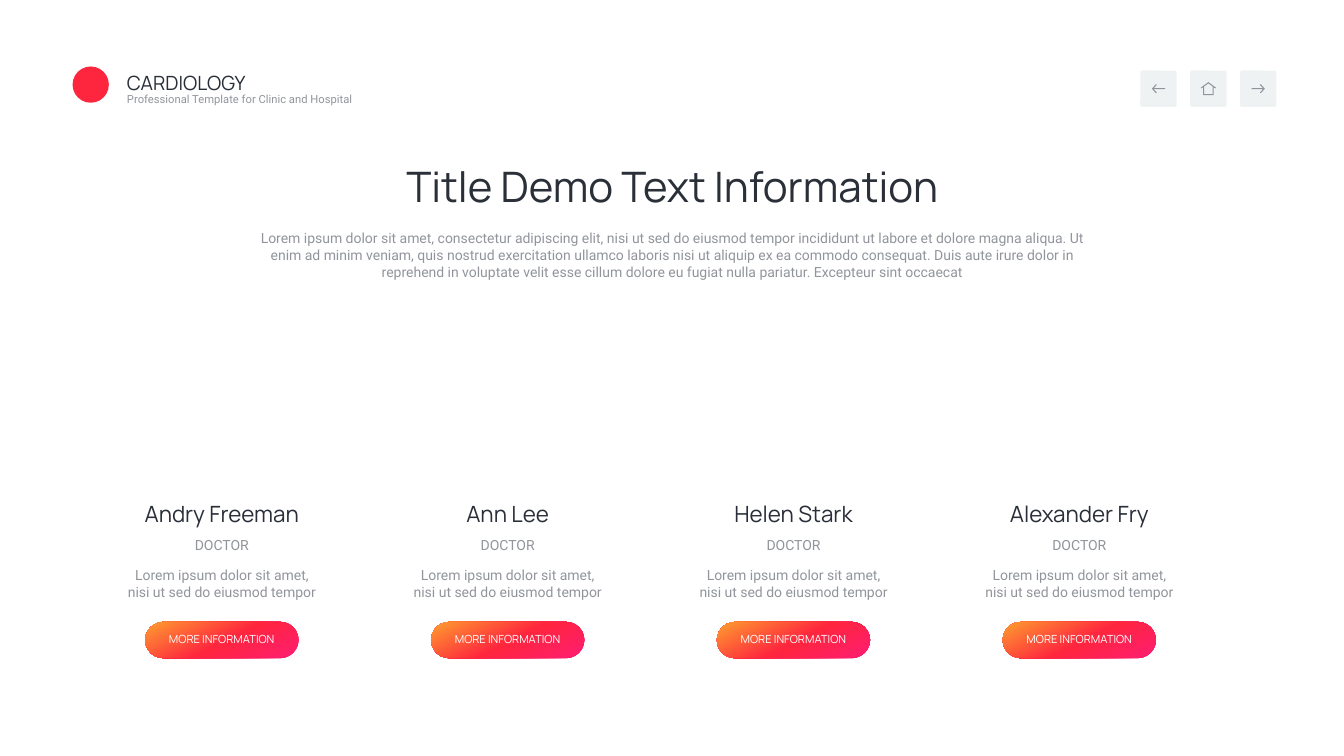
from lxml import etree
from pptx import Presentation, util as u
from pptx.dml.color import RGBColor
from pptx.enum import shapes, text
from pptx.oxml.ns import qn

SLIDE_WIDTH, SLIDE_HEIGHT = 13.33, 7.5
DARK, GREY, TILE, WHITE = "292E38", "91959B", "EFF2F3", "FFFFFF"
HEADING_FONT, BODY_FONT = "Manrope", "Roboto"
WARM_STOPS = [(1, "FE1D72"), (47, "FE253E"), (100, "FE9F2F")]
DOCTORS = ["Andry Freeman", "Ann Lee", "Helen Stark", "Alexander Fry"]
FIRST_CENTRE, COLUMN_PITCH = 2.2, 2.835
TILE_SIZE, TILE_TOP, TILE_PITCH = 0.36, 0.7, 0.495
FIRST_TILE = 11.31
DESCRIPTION = (
    "Lorem ipsum dolor sit amet, consectetur adipiscing elit, nisi ut sed do "
    "eiusmod tempor incididunt ut labore et dolore magna aliqua. Ut enim ad "
    "minim veniam, quis nostrud exercitation ullamco laboris nisi ut aliquip ex "
    "ea commodo consequat. Duis aute irure dolor in reprehend in voluptate velit "
    "esse cillum dolore eu fugiat nulla pariatur. Excepteur sint occaecat"
)

# Icon outlines, in thousandths of an inch
RIGHT_ARROW = [[(130, 45), (90, 90), (82, 82), (112, 50), (0, 50),
                (0, 40), (112, 40), (82, 8), (90, 0)]]
LEFT_ARROW = [[(130 - x, y) for x, y in RIGHT_ARROW[0]]]
HOUSE = [
    [(75, 0), (150, 55), (144, 63), (127, 50), (127, 130),
     (23, 130), (23, 50), (6, 63), (0, 55)],
    [(75, 13), (33, 43), (33, 120), (117, 120), (117, 43)],
]


def color(value):
    return RGBColor.from_string(value)


def fill_solid(shape, value):
    shape.shadow.inherit = False
    shape.fill.solid()
    shape.fill.fore_color.rgb = color(value)
    shape.line.fill.background()


def fill_gradient(shape, stops, clockwise_angle):
    shape.shadow.inherit = False
    shape.line.fill.background()
    shape.fill.gradient()
    shape.fill.gradient_angle = 360 - clockwise_angle
    stop_list = shape._element.spPr.find(".//" + qn("a:gsLst"))
    for stop in list(stop_list):
        stop_list.remove(stop)
    for percent, value in stops:
        stop = etree.SubElement(stop_list, qn("a:gs"), pos=str(percent * 1000))
        etree.SubElement(stop, qn("a:srgbClr"), val=value)


def add_preset(slide, preset, left, top, width, height):
    return slide.shapes.add_shape(
        preset, *map(u.Inches, (left, top, width, height)))


def add_label(slide, wording, left, top, width, height, size, font, value,
              align=text.PP_ALIGN.CENTER, middle=False, inset=0.03):
    box = slide.shapes.add_textbox(*map(u.Inches, (left, top, width, height)))
    frame = box.text_frame
    frame.text = wording
    frame.word_wrap = True
    frame.auto_size = text.MSO_AUTO_SIZE.SHAPE_TO_FIT_TEXT
    frame.vertical_anchor = (
        text.MSO_ANCHOR.MIDDLE if middle else text.MSO_ANCHOR.TOP)
    frame.margin_left = frame.margin_right = u.Inches(inset)
    frame.margin_top = frame.margin_bottom = u.Inches(inset)
    paragraph = frame.paragraphs[0]
    paragraph.alignment = align
    for run in paragraph.runs:
        run.font.size = u.Pt(size)
        run.font.name = font
        run.font.color.rgb = color(value)


def add_icon(slide, contours, centre_x, centre_y):
    width = max(x for x, _ in contours[0]) / 1000
    height = max(y for _, y in contours[0]) / 1000
    builder = slide.shapes.build_freeform(*contours[0][0], scale=u.Inches(1) / 1000)
    builder.add_line_segments(contours[0][1:], close=True)
    for contour in contours[1:]:
        builder.move_to(*contour[0])
        builder.add_line_segments(contour[1:], close=True)
    icon = builder.convert_to_shape(
        u.Inches(centre_x - width / 2), u.Inches(centre_y - height / 2))
    fill_solid(icon, "90959C")


def add_navigation(slide):
    for index, icon in enumerate([LEFT_ARROW, HOUSE, RIGHT_ARROW]):
        left = FIRST_TILE + index * TILE_PITCH
        tile = add_preset(slide, shapes.MSO_SHAPE.ROUNDED_RECTANGLE,
                          left, TILE_TOP, TILE_SIZE, TILE_SIZE)
        tile.adjustments[0] = 0.05
        fill_solid(tile, TILE)
        add_icon(slide, icon, left + TILE_SIZE / 2, TILE_TOP + TILE_SIZE / 2)


def add_header(slide):
    marker = add_preset(slide, shapes.MSO_SHAPE.OVAL, 0.72, 0.66, 0.36, 0.36)
    fill_solid(marker, "FE253E")
    left = text.PP_ALIGN.LEFT
    add_label(slide, "CARDIOLOGY", 1.2, 0.64, 1.56, 0.35, 14,
              HEADING_FONT, DARK, left, inset=0.06)
    add_label(slide, "Professional Template for Clinic and Hospital",
              1.2, 0.86, 3.47, 0.25, 8, BODY_FONT, GREY, left, True, 0.06)


def add_doctor(slide, name, centre):
    def centred(wording, top, width, height, size, font, value, middle=False):
        add_label(slide, wording, centre - width / 2, top, width, height,
                  size, font, value, middle=middle)

    centred(name, 4.93, 2.19, 0.33, 16, HEADING_FONT, DARK)
    centred("DOCTOR", 5.3, 0.8, 0.22, 10, BODY_FONT, GREY, middle=True)
    centred("Lorem ipsum dolor sit amet, nisi ut sed do eiusmod tempor",
            5.59, 1.94, 0.39, 10, BODY_FONT, GREY)
    button = add_preset(slide, shapes.MSO_SHAPE.ROUNDED_RECTANGLE,
                        centre - 0.76, 6.17, 1.52, 0.36)
    button.adjustments[0] = 0.5
    fill_gradient(button, WARM_STOPS, 243)
    centred("MORE INFORMATION", 6.24, 1.52, 0.19, 8, HEADING_FONT, WHITE)


def main():
    presentation = Presentation()
    presentation.slide_width = u.Inches(SLIDE_WIDTH)
    presentation.slide_height = u.Inches(SLIDE_HEIGHT)
    slide = presentation.slides.add_slide(presentation.slide_layouts[6])
    add_navigation(slide)
    add_header(slide)
    add_label(slide, "Title Demo Text Information", 3.28, 1.56, 6.78, 0.56,
              30, HEADING_FONT, "2A2F38")
    add_label(slide, DESCRIPTION, 2.48, 2.25, 8.37, 0.56, 10, BODY_FONT, GREY)
    for index, name in enumerate(DOCTORS):
        add_doctor(slide, name, FIRST_CENTRE + index * COLUMN_PITCH)
    presentation.save("out.pptx")


if __name__ == "__main__":
    main()
